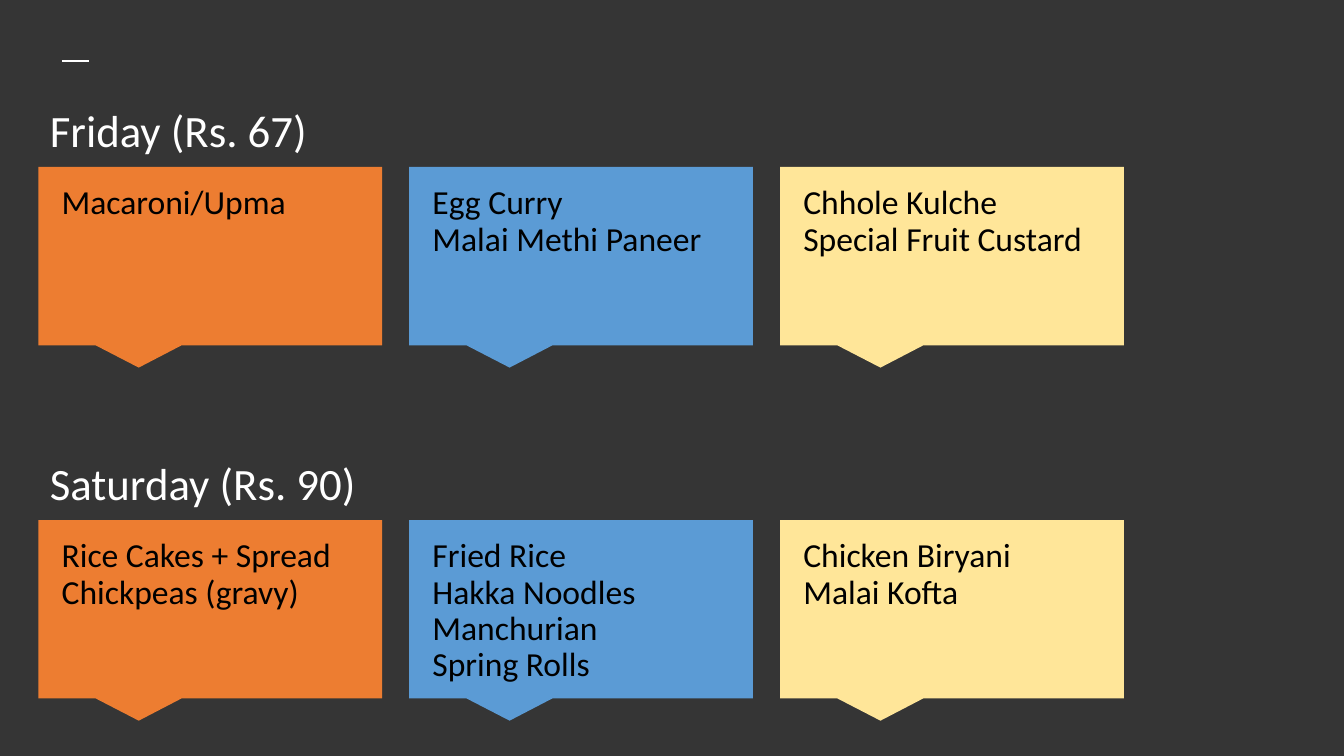
from lxml.etree import SubElement
from pptx import Presentation
from pptx.dml.color import RGBColor as RGB
from pptx.enum.shapes import MSO_CONNECTOR as LINK, MSO_SHAPE as SHAPE
from pptx.enum.text import MSO_ANCHOR as ANCHOR
from pptx.oxml.ns import qn
from pptx.util import Pt

COLORS = {
    "back": "353535",
    "white": "FFFFFF",
    "black": "000000",
    "orange": "ED7D31",
    "blue": "5B9BD5",
    "yellow": "FFE699",
}
FILLS = ["orange", "blue", "yellow"]
MENU = [
    ("Friday (Rs. 67)", [
        "Macaroni/Upma",
        "Egg Curry\nMalai Methi Paneer",
        "Chhole Kulche\nSpecial Fruit Custard",
    ]),
    ("Saturday (Rs. 90)", [
        "Rice Cakes + Spread\nChickpeas (gravy)",
        "Fried Rice\nHakka Noodles\nManchurian\nSpring Rolls",
        "Chicken Biryani\nMalai Kofta",
    ]),
]


def color(name):
    return RGB.from_string(COLORS[name])


def write(text, left, top, width, height, size=24, ink="black", after=0):
    box = slide.shapes.add_textbox(Pt(left), Pt(top), Pt(width), Pt(height))
    frame = box.text_frame
    frame.word_wrap = True
    frame.vertical_anchor = ANCHOR.TOP
    frame.margin_left = frame.margin_right = Pt(9.4)
    frame.margin_top = frame.margin_bottom = Pt(9.4)
    para = frame.paragraphs[0]
    para.text = text
    para.line_spacing = 0.9
    para.space_after = Pt(after)
    for run in para.runs:
        run.font.name = "Calibri"
        run.font.size = Pt(size)
        run.font.color.rgb = color(ink)


deck = Presentation()
deck.slide_width, deck.slide_height = Pt(960), Pt(540)
slide = deck.slides.add_slide(deck.slide_layouts[6])
slide.background.fill.solid()
slide.background.fill.fore_color.rgb = color("back")

dash = slide.shapes.add_connector(LINK.STRAIGHT, Pt(44.3), Pt(43.7), Pt(63.8), Pt(43.7))
dash.line.color.rgb = color("white")
dash.line.width = Pt(1.5)
SubElement(dash._element.spPr, qn("a:effectLst"))

for row, (day, meals) in enumerate(MENU):
    top = 119.3 + row * 252.2
    write(day, 26.2, top - 51, 907, 51, size=32, ink="white")
    for col, (meal, fill) in enumerate(zip(meals, FILLS)):
        left = 27.4 + col * 264.9
        card = slide.shapes.add_shape(
            SHAPE.RECTANGULAR_CALLOUT, Pt(left), Pt(top), Pt(245.5), Pt(127.4))
        card.adjustments[0] = -0.208
        card.adjustments[1] = 0.625
        card.shadow.inherit = False
        card.fill.solid()
        card.fill.fore_color.rgb = color(fill)
        card.line.fill.background()
        write(meal, left + 7.2, top + 4, 232, 114, after=16)

deck.save("out.pptx")
